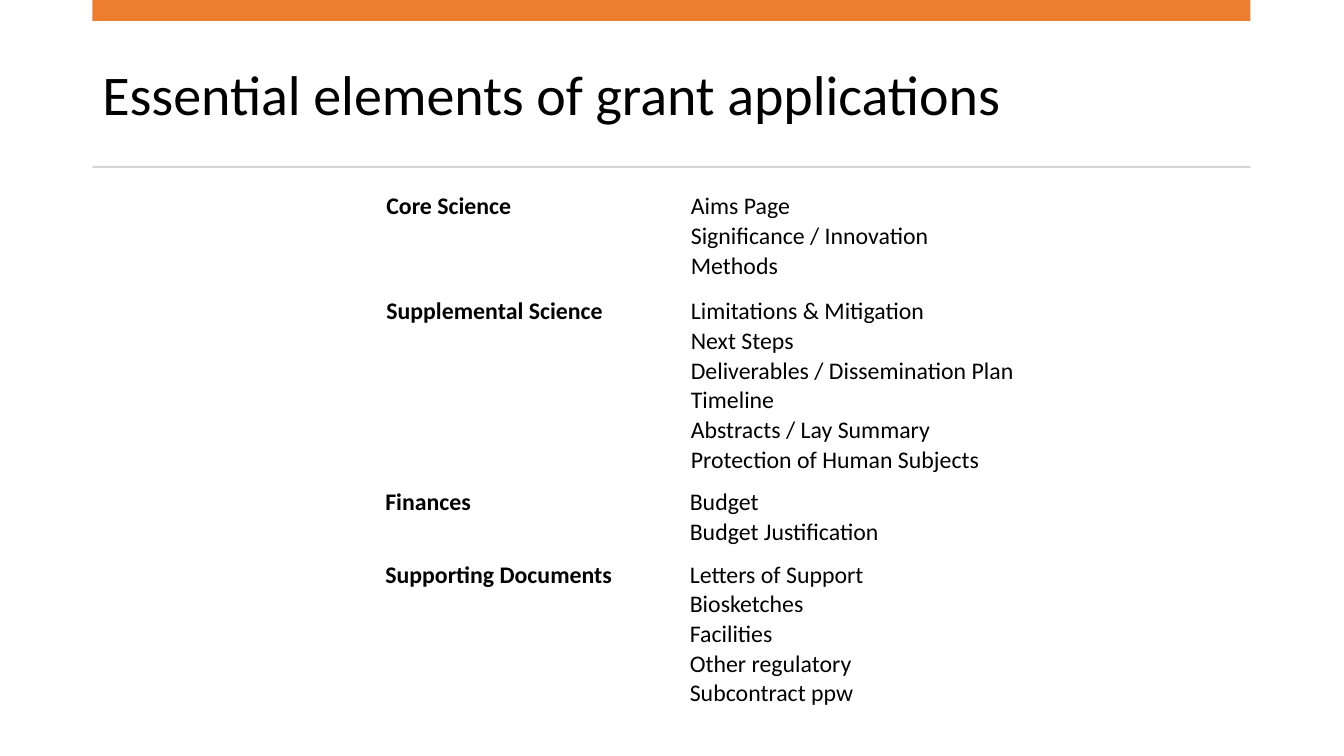
"""Build the slide on the essential elements of grant applications."""
from dataclasses import dataclass

from lxml import etree
from pptx import Presentation
from pptx import util as u
from pptx.dml.color import RGBColor
from pptx.enum import shapes, text
from pptx.oxml.ns import qn

PX = 9525
FONT = "Calibri"
BLACK = RGBColor(0x00, 0x00, 0x00)
ORANGE = RGBColor(0xED, 0x7D, 0x31)
GREY = RGBColor(0xD5, 0xD5, 0xD5)

LEFT, WIDTH = 88, 1103
COLUMNS = (290, 332)
ROW_HEIGHT = 20
BODY_SIZE = 17


@dataclass(frozen=True)
class Bar:
    """A full-width horizontal band."""
    top: int
    height: int
    color: RGBColor


@dataclass(frozen=True)
class Section:
    """A labelled group of application elements."""
    left: int
    top: int
    label: str
    items: tuple[str, ...]


BARS = (Bar(0, 20, ORANGE), Bar(158, 2, GREY))

SECTIONS = (
    Section(367, 182, "Core Science",
            ("Aims Page", "Significance / Innovation", "Methods")),
    Section(367, 282, "Supplemental Science",
            ("Limitations & Mitigation", "Next Steps",
             "Deliverables / Dissemination Plan", "Timeline",
             "Abstracts / Lay Summary", "Protection of Human Subjects")),
    Section(366, 464, "Finances", ("Budget", "Budget Justification")),
    Section(366, 533, "Supporting Documents",
            ("Letters of Support", "Biosketches", "Facilities",
             "Other regulatory", "Subcontract ppw")),
)


def px(length: int) -> u.Emu:
    """Convert pixels to EMU."""
    return u.Emu(length * PX)


def style(p, size: int, bold: bool = False) -> None:
    """Set the font of a paragraph."""
    p.font.name = FONT
    p.font.size = u.Pt(size)
    p.font.bold = bold
    p.font.color.rgb = BLACK


def add_title(slide, title: str) -> None:
    """Add the slide title."""
    sp = slide.shapes.add_textbox(px(LEFT), px(36), px(WIDTH), px(113))
    tf = sp.text_frame
    tf.word_wrap = True
    tf.vertical_anchor = text.MSO_ANCHOR.MIDDLE
    p = tf.paragraphs[0]
    p.text = title
    p.line_spacing = 0.9
    style(p, 40)


def add_bar(slide, bar: Bar) -> None:
    """Add a filled band without outline."""
    sp = slide.shapes.add_shape(shapes.MSO_SHAPE.RECTANGLE, px(LEFT),
                                px(bar.top), px(WIDTH), px(bar.height))
    sp.shadow.inherit = False
    sp.fill.solid()
    sp.fill.fore_color.rgb = bar.color
    sp.line.fill.background()


def fill_cell(cell, content: str, bold: bool) -> None:
    """Write one table cell with tight margins and no fill."""
    cell.fill.background()
    cell.vertical_anchor = text.MSO_ANCHOR.BOTTOM
    cell.margin_left = cell.margin_right = cell.margin_top = px(1)
    cell.margin_bottom = 0
    p = cell.text_frame.paragraphs[0]
    style(p, BODY_SIZE, bold)
    if content:
        p.text = content
    else:
        end = etree.SubElement(p._p, qn("a:endParaRPr"), sz=str(BODY_SIZE * 100))
        etree.SubElement(end, qn("a:latin"), typeface=FONT)


def add_section(slide, section: Section) -> None:
    """Add a two-column table with the label beside the first item."""
    count = len(section.items)
    frame = slide.shapes.add_table(count, len(COLUMNS), px(section.left),
                                   px(section.top), px(sum(COLUMNS)),
                                   px(ROW_HEIGHT * count))
    table = frame.table
    table.first_row = table.horz_banding = False
    for column, width in zip(table.columns, COLUMNS):
        column.width = px(width)
    for i, item in enumerate(section.items):
        fill_cell(table.cell(i, 0), "" if i else section.label, True)
        fill_cell(table.cell(i, 1), item, False)


def main() -> None:
    """Build and save the presentation."""
    prs = Presentation()
    prs.slide_width, prs.slide_height = px(1280), px(720)
    slide = prs.slides.add_slide(prs.slide_layouts[6])
    add_title(slide, "Essential elements of grant applications")
    for bar in BARS:
        add_bar(slide, bar)
    for section in SECTIONS:
        add_section(slide, section)
    prs.save("out.pptx")


if __name__ == "__main__":
    main()
